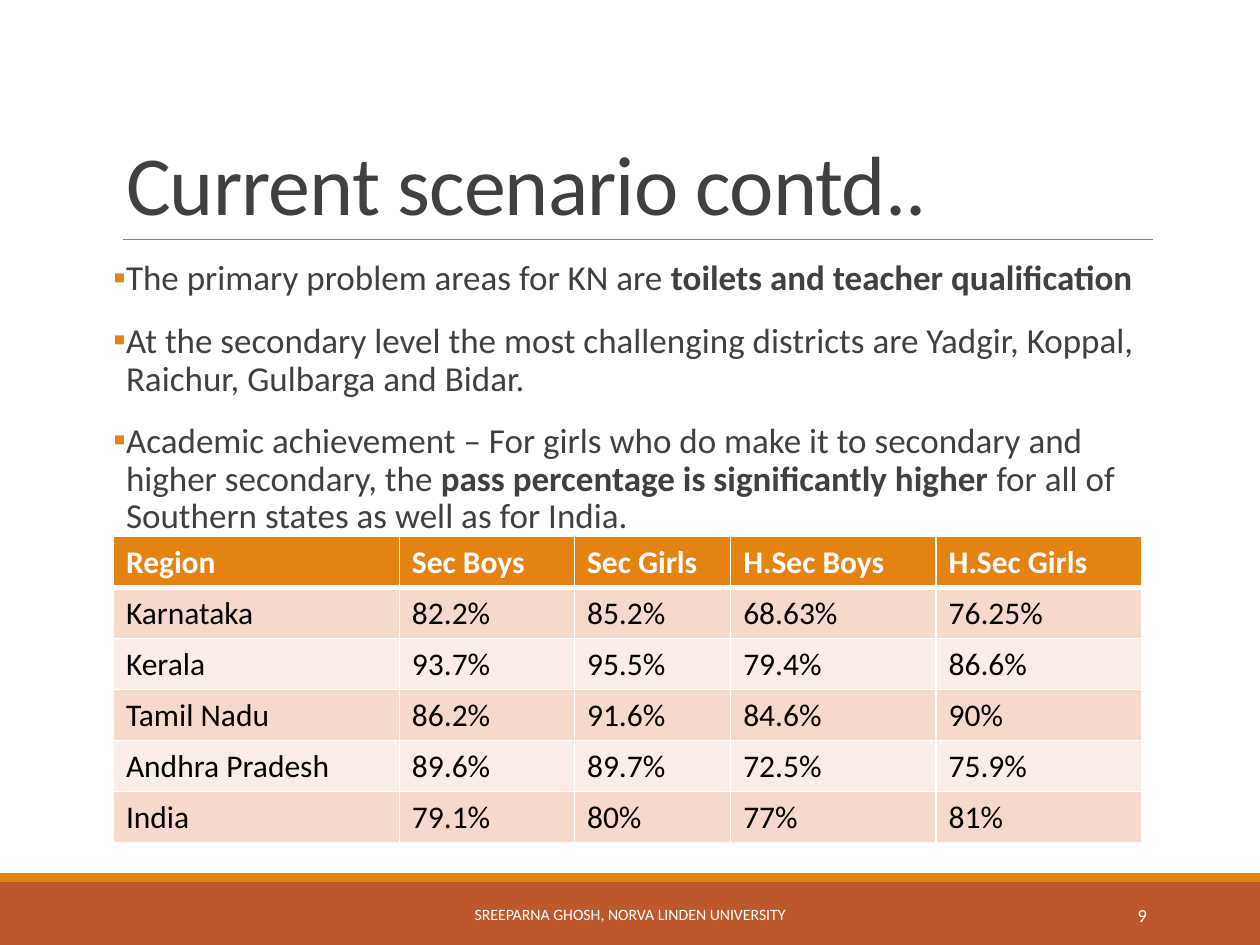
from dataclasses import dataclass

from lxml import etree
from pptx import Presentation
from pptx.dml.color import RGBColor
from pptx.enum.shapes import MSO_CONNECTOR, MSO_SHAPE
from pptx.enum.text import MSO_ANCHOR, MSO_AUTO_SIZE, PP_ALIGN
from pptx.oxml.ns import qn
from pptx.util import Inches, Pt

RECT = MSO_SHAPE.RECTANGLE
STRAIGHT = MSO_CONNECTOR.STRAIGHT
MIDDLE, BOTTOM = MSO_ANCHOR.MIDDLE, MSO_ANCHOR.BOTTOM
LEFT, CENTER, RIGHT = PP_ALIGN.LEFT, PP_ALIGN.CENTER, PP_ALIGN.RIGHT
NO_AUTOFIT = MSO_AUTO_SIZE.NONE
TITLE_ONLY = 5


@dataclass(frozen=True)
class Theme:
    font: str = "Calibri"
    text: str = "404040"
    white: str = "FFFFFF"
    black: str = "000000"
    rule: str = "808080"
    orange: str = "E48312"
    rust: str = "BD582C"
    bands: tuple = ("F5D9CC", "FAEDE7")
    title_size: float = 48
    body_size: float = 20
    table_size: float = 18
    footer_size: float = 9
    number_size: float = 10.5


THEME = Theme()

# Each bullet is a list of (text, bold) runs
BULLETS = [
    [("The primary problem areas for KN are ", False),
     ("toilets and teacher qualification", True)],
    [("At the secondary level the most challenging districts are Yadgir, "
      "Koppal, Raichur, Gulbarga and Bidar.", False)],
    [("Academic achievement – For girls who do make it to secondary and "
      "higher secondary, the ", False),
     ("pass percentage is significantly higher ", True),
     ("for all of Southern states as well as for India.", False)],
]

PASS_RATES = [
    ["Region", "Sec Boys", "Sec Girls", "H.Sec Boys", "H.Sec Girls"],
    ["Karnataka", "82.2%", "85.2%", "68.63%", "76.25%"],
    ["Kerala", "93.7%", "95.5%", "79.4%", "86.6%"],
    ["Tamil Nadu", "86.2%", "91.6%", "84.6%", "90%"],
    ["Andhra Pradesh", "89.6%", "89.7%", "72.5%", "75.9%"],
    ["India", "79.1%", "80%", "77%", "81%"],
]
COLUMN_WIDTHS = [2.27, 1.39, 1.24, 1.63, 1.63]
TABLE_HEIGHT = 2.43


def rgb(value):
    return RGBColor.from_string(value)


def box(left, top, width, height):
    return [Inches(v) for v in (left, top, width, height)]


def format_run(r, size, color, bold=False):
    r.font.name = THEME.font
    r.font.size = Pt(size)
    r.font.bold = bold
    r.font.color.rgb = rgb(color)


def add_band(slide, top, height, color):
    sp = slide.shapes.add_shape(RECT, *box(0, top, 10, height))
    sp.shadow.inherit = False
    sp.fill.solid()
    sp.fill.fore_color.rgb = rgb(color)
    sp.line.fill.background()


def add_rule(slide, left, right, y):
    line = slide.shapes.add_connector(
        STRAIGHT, Inches(left), Inches(y), Inches(right), Inches(y))
    line.line.color.rgb = rgb(THEME.rule)
    line.line.width = Pt(0.5)
    etree.SubElement(line._element.spPr, qn("a:effectLst"))


def set_title(slide, text):
    title = slide.shapes.title
    title.left, title.top, title.width, title.height = box(0.9, 0.31, 8.25, 1.59)
    tf = title.text_frame
    tf.text = text
    tf.auto_size = NO_AUTOFIT
    tf.vertical_anchor = BOTTOM
    p = tf.paragraphs[0]
    p.alignment = LEFT
    p.line_spacing = 0.85
    r = p.runs[0]
    format_run(r, THEME.title_size, THEME.text)
    r.font._element.set("spc", "-50")


def set_bullet(p):
    pPr = p._p.get_or_add_pPr()
    pPr.set("marL", str(Inches(0.1)))
    pPr.set("indent", str(-Inches(0.1)))
    color = etree.SubElement(pPr, qn("a:buClr"))
    etree.SubElement(color, qn("a:srgbClr"), val=THEME.orange)
    etree.SubElement(pPr, qn("a:buFont"), typeface=THEME.font)
    etree.SubElement(pPr, qn("a:buChar"), char="▪")


def add_bullets(slide, bullets):
    tf = slide.shapes.add_textbox(*box(0.9, 2.02, 8.25, 4.4)).text_frame
    tf.word_wrap = True
    tf.margin_left = tf.margin_right = 0
    for i, runs in enumerate(bullets):
        p = tf.add_paragraph() if i else tf.paragraphs[0]
        p.line_spacing = 0.9
        p.space_before, p.space_after = Pt(12), Pt(2)
        set_bullet(p)
        for text, bold in runs:
            r = p.add_run()
            r.text = text
            format_run(r, THEME.body_size, THEME.text, bold)


def add_footer_text(slide, left, width, text, size, alignment):
    tf = slide.shapes.add_textbox(*box(left, 7.06, width, 0.4)).text_frame
    tf.word_wrap = True
    tf.vertical_anchor = MIDDLE
    tf.text = text
    p = tf.paragraphs[0]
    p.alignment = alignment
    format_run(p.runs[0], size, THEME.white)


def set_borders(cell, top, bottom):
    tcPr = cell._tc.get_or_add_tcPr()
    for side, width in (("L", 1), ("R", 1), ("T", top), ("B", bottom)):
        ln = etree.SubElement(tcPr, qn(f"a:ln{side}"), w=str(Pt(width)))
        fill = etree.SubElement(ln, qn("a:solidFill"))
        etree.SubElement(fill, qn("a:srgbClr"), val=THEME.white)


def add_pass_table(slide, rows, widths):
    table = slide.shapes.add_table(
        len(rows), len(widths),
        *box(0.9, 4.26, sum(widths), TABLE_HEIGHT)).table
    for column, width in zip(table.columns, widths):
        column.width = Inches(width)
    for i, values in enumerate(rows):
        header = i == 0
        fill = THEME.orange if header else THEME.bands[(i - 1) % 2]
        color = THEME.white if header else THEME.black
        for j, value in enumerate(values):
            cell = table.cell(i, j)
            set_borders(cell, top=3 if i == 1 else 1, bottom=3 if header else 1)
            cell.fill.solid()
            cell.fill.fore_color.rgb = rgb(fill)
            cell.text_frame.text = value
            r = cell.text_frame.paragraphs[0].runs[0]
            format_run(r, THEME.table_size, color, header)


def main():
    prs = Presentation()
    prs.slide_width, prs.slide_height = Inches(10), Inches(7.5)
    slide = prs.slides.add_slide(prs.slide_layouts[TITLE_ONLY])

    # Footer bands and title rule
    add_band(slide, 7, 0.5, THEME.rust)
    add_band(slide, 6.93, 0.07, THEME.orange)
    add_rule(slide, 0.98, 9.15, 1.9)

    # Title and bullets
    set_title(slide, "Current scenario contd..")
    add_bullets(slide, BULLETS)

    # Footer text and slide number
    add_footer_text(slide, 3.02, 3.96, "SREEPARNA GHOSH, NORVA LINDEN UNIVERSITY",
                    THEME.footer_size, CENTER)
    add_footer_text(slide, 8.12, 1.08, "9", THEME.number_size, RIGHT)

    # Pass percentages by region
    add_pass_table(slide, PASS_RATES, COLUMN_WIDTHS)

    prs.save("out.pptx")


if __name__ == "__main__":
    main()
